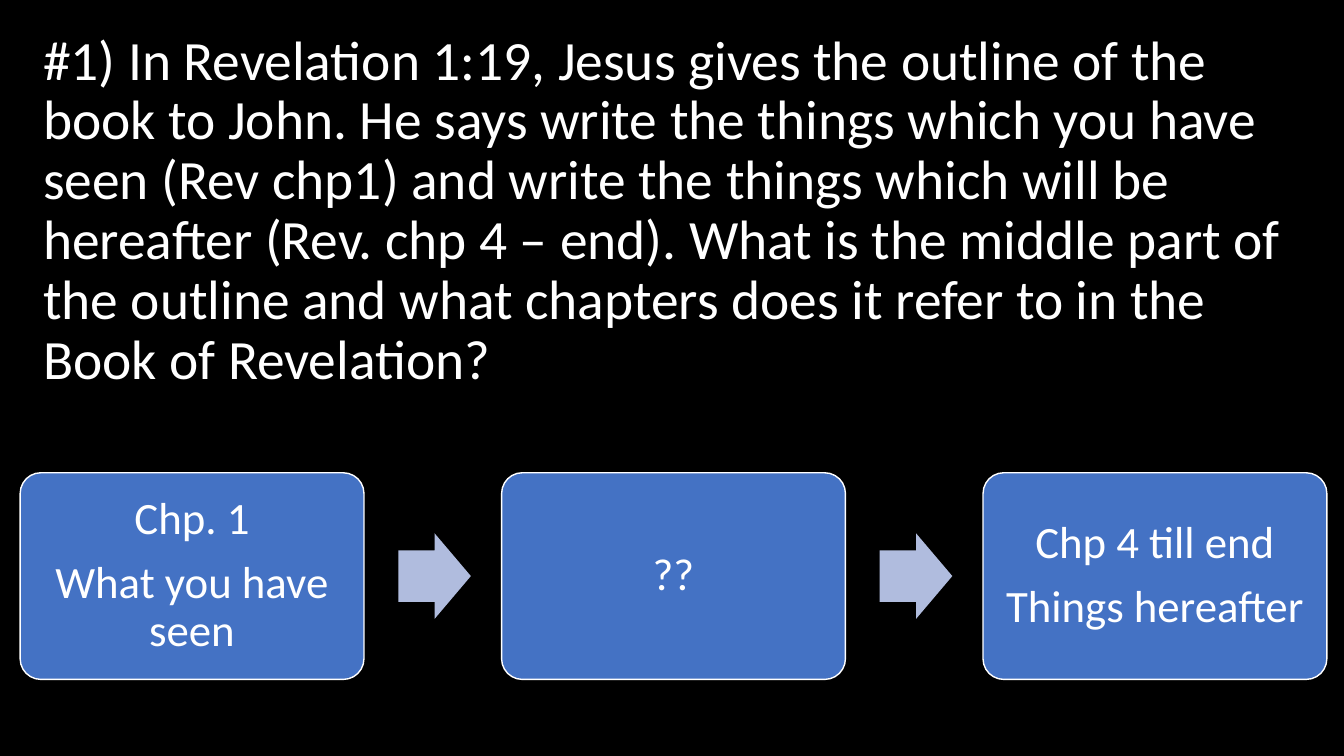
from dataclasses import dataclass

from pptx import Presentation
from pptx.dml.color import RGBColor
from pptx.enum.shapes import MSO_SHAPE
from pptx.enum.text import MSO_ANCHOR, PP_ALIGN
from pptx.util import Inches, Pt

ROUNDED = MSO_SHAPE.ROUNDED_RECTANGLE
ARROW = MSO_SHAPE.RIGHT_ARROW
MIDDLE = MSO_ANCHOR.MIDDLE
LEFT, CENTER = PP_ALIGN.LEFT, PP_ALIGN.CENTER


@dataclass(frozen=True)
class Theme:
    font: str = "Calibri"
    background: RGBColor = RGBColor(0x00, 0x00, 0x00)
    text: RGBColor = RGBColor(0xFF, 0xFF, 0xFF)
    step: RGBColor = RGBColor(0x44, 0x72, 0xC4)
    arrow: RGBColor = RGBColor(0xB0, 0xBC, 0xDE)
    question_size: float = 39.6
    step_size: float = 32
    step_gap: float = 11


def write_text(frame, lines, *, font, size, color, align=LEFT, space_after=0):
    """Fill a text frame with one paragraph per line."""
    frame.word_wrap = True
    frame.vertical_anchor = MIDDLE
    for index, line in enumerate(lines):
        paragraph = frame.paragraphs[0] if index == 0 else frame.add_paragraph()
        paragraph.alignment = align
        paragraph.line_spacing = 0.9
        paragraph.space_after = Pt(space_after)
        run = paragraph.add_run()
        run.text = line
        run.font.name = font
        run.font.size = Pt(size)
        run.font.color.rgb = color


class OutlineSlide:
    def __init__(self, slide, theme):
        self.shapes = slide.shapes
        self.theme = theme
        slide.background.fill.solid()
        slide.background.fill.fore_color.rgb = theme.background

    def question(self, text, left, top, width, height):
        box = self.shapes.add_textbox(
            Inches(left), Inches(top), Inches(width), Inches(height))
        write_text(box.text_frame, [text], font=self.theme.font,
                   size=self.theme.question_size, color=self.theme.text)

    def block(self, preset, adjustments, fill, left, top, width, height):
        block = self.shapes.add_shape(
            preset, Inches(left), Inches(top), Inches(width), Inches(height))
        for index, value in enumerate(adjustments):
            block.adjustments[index] = value
        block.shadow.inherit = False
        block.fill.solid()
        block.fill.fore_color.rgb = fill
        block.line.fill.background()
        return block

    def step(self, lines, left, top, width, height):
        step = self.block(ROUNDED, [0.1], self.theme.step, left, top, width, height)
        step.line.color.rgb = self.theme.text
        step.line.width = Pt(1)
        frame = step.text_frame
        frame.margin_left = frame.margin_right = Inches(0.13)
        frame.margin_top = frame.margin_bottom = Inches(0.13)
        write_text(frame, lines, font=self.theme.font, size=self.theme.step_size,
                   color=self.theme.text, align=CENTER,
                   space_after=self.theme.step_gap)

    def arrow(self, left, top, width, height):
        self.block(ARROW, [0.6, 0.5], self.theme.arrow, left, top, width, height)


QUESTION = (
    "#1) In Revelation 1:19, Jesus gives the outline of the book to John. "
    "He says write the things which you have seen (Rev chp1) and write the "
    "things which will be hereafter (Rev. chp 4 – end). What is the middle "
    "part of the outline and what chapters does it refer to in the Book of "
    "Revelation?"
)
OUTLINE_STEPS = [
    ["Chp. 1", "What you have seen"],
    ["??"],
    ["Chp 4 till end", "Things hereafter"],
]


def main():
    deck = Presentation()
    deck.slide_width, deck.slide_height = Inches(13.33), Inches(7.5)
    outline = OutlineSlide(deck.slides.add_slide(deck.slide_layouts[6]), Theme())

    # Question
    outline.question(QUESTION, 0.33, 0.29, 12.64, 3.62)

    # Outline steps, with an arrow from each to the next
    first_left, pitch, arrow_offset = 0.2, 4.775, 3.75
    for index, lines in enumerate(OUTLINE_STEPS):
        left = first_left + index * pitch
        outline.step(lines, left, 4.69, 3.41, 2.05)
        if index < len(OUTLINE_STEPS) - 1:
            outline.arrow(left + arrow_offset, 5.29, 0.72, 0.85)

    deck.save("out.pptx")


if __name__ == "__main__":
    main()
